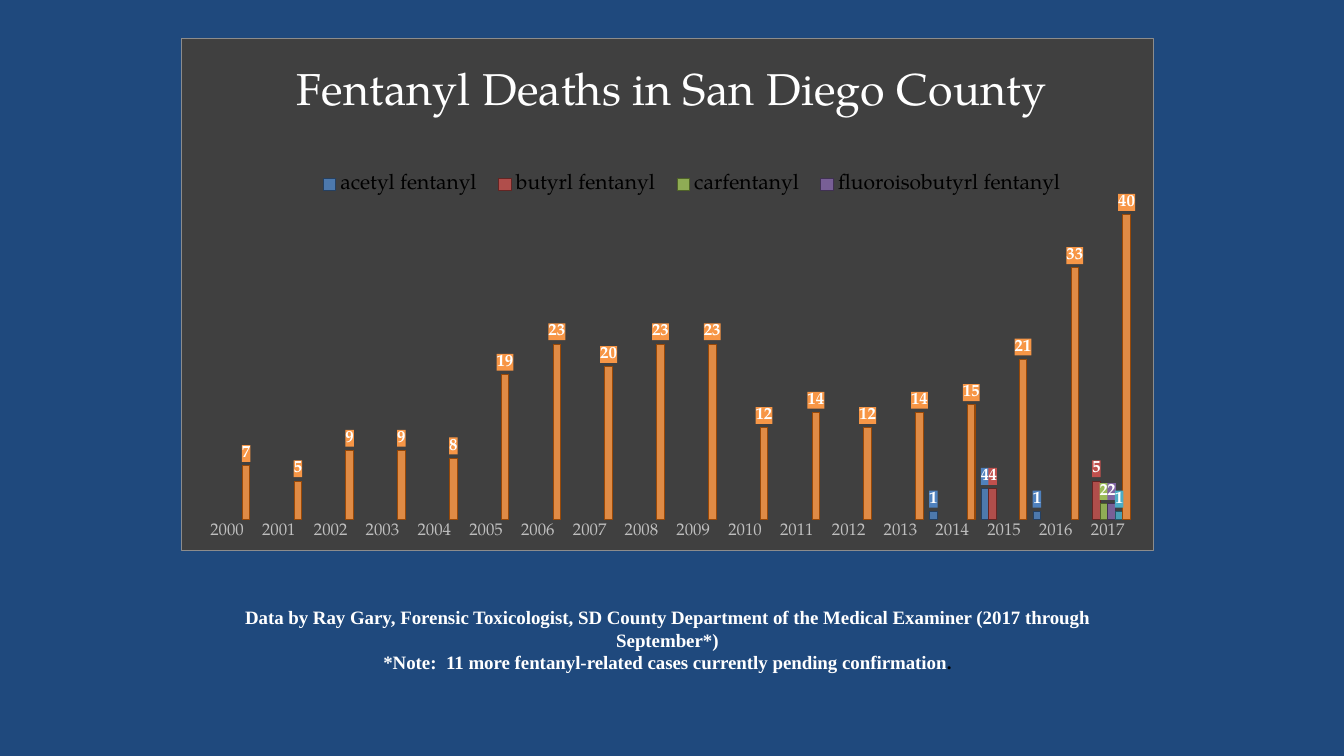
from dataclasses import dataclass

import pptx
import pptx.chart.data
import pptx.dml.color
import pptx.enum.chart
import pptx.enum.text
import pptx.oxml
import pptx.oxml.ns
import pptx.util
from pptx.util import Inches

CHART_FONT = "TeX Gyre Pagella"
YEARS = [str(year) for year in range(2000, 2018)]
HIDDEN_LEGEND_ENTRIES = (4, 5)


@dataclass
class Drug:
    name: str
    color: str
    line_color: str
    deaths: dict[str, int]


DRUGS = [
    Drug("acetyl fentanyl", "4F81BD", "254061", {"2014": 1, "2015": 4, "2016": 1}),
    Drug("butyrl fentanyl", "C0504D", "632523", {"2015": 4, "2017": 5}),
    Drug("carfentanyl", "9BBB59", "4F6228", {"2017": 2}),
    Drug("fluoroisobutyrl fentanyl", "8064A2", "403152", {"2017": 2}),
    Drug("fluranyl fentanyl", "4BACC6", "215968", {"2017": 1}),
    Drug("fentanyl", "F79646", "984807", dict(zip(YEARS, (
        7, 5, 9, 9, 8, 19, 23, 20, 23, 23, 12, 14, 12, 14, 15, 21, 33, 40)))),
]


def rgb(color: str) -> pptx.dml.color.RGBColor:
    return pptx.dml.color.RGBColor.from_string(color)


def format_font(font, size: float, color: str, name: str = CHART_FONT, bold: bool = False) -> None:
    font.size = pptx.util.Pt(size)
    font.name = name
    font.bold = bold
    font.color.rgb = rgb(color)


def add_text(paragraph, text: str, **font_format) -> None:
    run = paragraph.add_run()
    run.text = text
    format_font(run.font, **font_format)


def chart_xml(tag: str, content: str = "", attributes: str = ""):
    namespaces = pptx.oxml.ns.nsdecls("c", "a")
    return pptx.oxml.parse_xml(f"<c:{tag} {namespaces} {attributes}>{content}</c:{tag}>")


def solid_fill(color: str) -> str:
    return f'<a:solidFill><a:srgbClr val="{color}"/></a:solidFill>'


def manual_layout(inner: bool = False, **fractions: float):
    """Place a chart part by fractions x, y, w, h of the chart."""
    content = '<c:layoutTarget val="inner"/>' if inner else ""
    content += "".join(f'<c:{key}Mode val="edge"/>' for key in "xy")
    content += "".join(f'<c:{key} val="{value}"/>' for key, value in fractions.items())
    return chart_xml("layout", f"<c:manualLayout>{content}</c:manualLayout>")


def replace_layout(parent, layout, position: int) -> None:
    for old_layout in parent.findall(pptx.oxml.ns.qn("c:layout")):
        parent.remove(old_layout)
    parent.insert(position, layout)


def format_series(series, drug: Drug) -> None:
    series.format.fill.solid()
    series.format.fill.fore_color.rgb = rgb(drug.color)
    for color in series.format.fill._xPr.iter(pptx.oxml.ns.qn("a:srgbClr")):
        pptx.oxml.parse_xml  # noqa
        color.append(pptx.oxml.parse_xml(
            f'<a:alpha {pptx.oxml.ns.nsdecls("a")} val="88000"/>'))
    series.format.line.color.rgb = rgb(drug.line_color)
    series.format.line.width = pptx.util.Pt(0.75)
    series.invert_if_negative = False
    labels = series.data_labels
    labels.show_value = True
    labels.position = pptx.enum.chart.XL_LABEL_POSITION.OUTSIDE_END
    format_font(labels.font, 12, "FFFFFF", bold=True)
    text_format = labels._element.find(pptx.oxml.ns.qn("c:txPr"))
    text_format.addprevious(chart_xml("spPr", solid_fill(drug.color)))


def format_axes(chart) -> None:
    years = chart.category_axis
    years.major_tick_mark = pptx.enum.chart.XL_TICK_MARK.NONE
    years.format.line.fill.background()
    format_font(years.tick_labels.font, 12, "BFBFBF")
    deaths = chart.value_axis
    deaths.visible = False
    deaths.has_major_gridlines = False
    deaths.minimum_scale = 0
    deaths.maximum_scale = 45


def format_legend(chart) -> None:
    chart.has_legend = True
    legend = chart.legend
    legend.position = pptx.enum.chart.XL_LEGEND_POSITION.TOP
    legend.include_in_layout = False
    format_font(legend.font, 15, "000000")
    replace_layout(legend._element, manual_layout(x=0.13, y=0.25, w=0.79, h=0.07), 1)
    for position, index in enumerate(HIDDEN_LEGEND_ENTRIES, start=1):
        legend._element.insert(position, chart_xml(
            "legendEntry", f'<c:idx val="{index}"/><c:delete val="1"/>'))


def add_deaths_chart(slide) -> None:
    data = pptx.chart.data.CategoryChartData()
    data.categories = YEARS
    for drug in DRUGS:
        data.add_series(drug.name, [drug.deaths.get(year) for year in YEARS])
    chart = slide.shapes.add_chart(
        pptx.enum.chart.XL_CHART_TYPE.COLUMN_CLUSTERED,
        Inches(1.8), Inches(0.38), Inches(9.64), Inches(5.08), data).chart
    format_font(chart.font, 10, "FFFFFF")
    chart_space = chart._chartSpace
    chart_space.find(pptx.oxml.ns.qn("c:chart")).addnext(chart_xml(
        "spPr", solid_fill("404040") + f'<a:ln w="6350">{solid_fill("8C8C8C")}</a:ln>'))

    chart.has_title = True
    add_text(chart.chart_title.text_frame.paragraphs[0],
             "Fentanyl Deaths in San Diego County", size=32, color="FFFFFF")
    replace_layout(chart.chart_title._element, manual_layout(x=0.11, y=0.04), 1)

    plot = chart.plots[0]
    plot.vary_by_categories = False
    plot.gap_width = 84
    plot.overlap = 0
    for series, drug in zip(plot.series, DRUGS):
        format_series(series, drug)
    format_axes(chart)
    format_legend(chart)
    plot_area = chart_space.find(".//" + pptx.oxml.ns.qn("c:plotArea"))
    replace_layout(plot_area, manual_layout(inner=True, x=0.02, y=0.27, w=0.96, h=0.67), 0)


def add_data_note(slide) -> None:
    title = slide.shapes.title
    title.left, title.top = Inches(1.88), Inches(6.12)
    title.width, title.height = Inches(9.48), Inches(0.45)
    frame = title.text_frame
    frame.word_wrap = True
    frame.auto_size = pptx.enum.text.MSO_AUTO_SIZE.NONE
    frame.vertical_anchor = pptx.enum.text.MSO_ANCHOR.MIDDLE
    paragraph = frame.paragraphs[0]
    paragraph.alignment = pptx.enum.text.PP_ALIGN.CENTER
    note_format = {"size": 13.5, "name": "Times New Roman", "bold": True}
    add_text(paragraph, "Data by Ray Gary, Forensic Toxicologist, SD County Department of the "
             "Medical Examiner (2017 through September*)", color="FFFFFF", **note_format)
    paragraph.add_line_break()
    add_text(paragraph, "*Note:  11 more fentanyl-related cases currently pending confirmation",
             color="FFFFFF", **note_format)
    add_text(paragraph, ".", color="000000", **note_format)


def main() -> None:
    presentation = pptx.Presentation()
    presentation.slide_width = Inches(13.33)
    presentation.slide_height = Inches(7.5)
    slide = presentation.slides.add_slide(presentation.slide_layouts[5])
    slide.background.fill.solid()
    slide.background.fill.fore_color.rgb = rgb("1F497D")
    add_data_note(slide)
    add_deaths_chart(slide)
    presentation.save("out.pptx")


if __name__ == "__main__":
    main()
